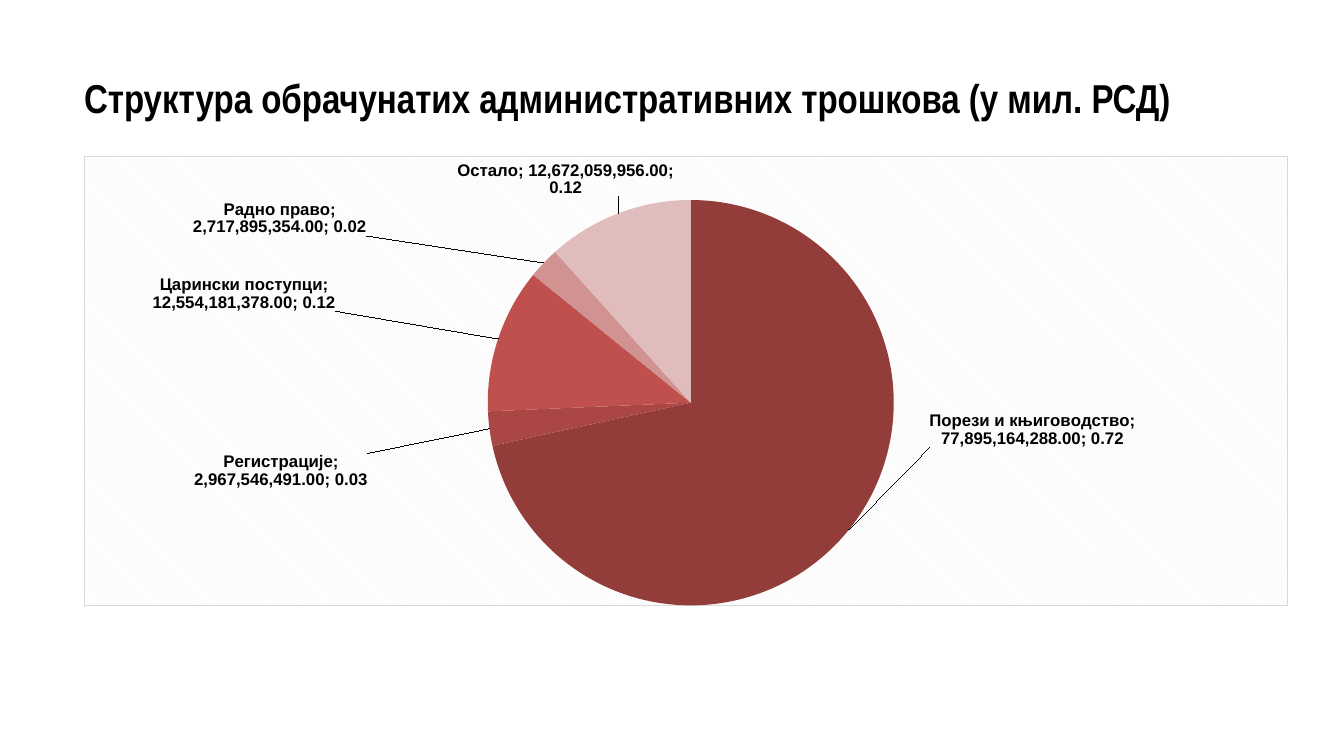
"""Build the slide on the structure of calculated administrative costs."""
from copy import deepcopy
from dataclasses import dataclass

from pptx import Presentation
from pptx.chart.chart import Chart
from pptx.chart.data import CategoryChartData
from pptx.dml.color import RGBColor
from pptx.enum.chart import XL_CHART_TYPE, XL_LABEL_POSITION
from pptx.enum.text import MSO_ANCHOR
from pptx.oxml import parse_xml
from pptx.oxml.ns import nsdecls, qn
from pptx.slide import Slide
from pptx.util import Emu, Pt

EMU_PER_PX = 914400 / 100.8
COLORS = {
    "text": "000000",
    "hatch": "F2F2F2",
    "ground": "FFFFFF",
    "border": "D9D9D9",
    "taxes": "923D3A",
    "registration": "AA4744",
    "customs": "C0504D",
    "labour": "D19392",
    "other": "E0BCBC",
}
CHART_BOX = (84, 156, 1204, 450)
TITLE_BOX = (84, 73, 1204, 94)


@dataclass(frozen=True)
class Cost:
    name: str
    amount: int
    color: str
    label_dx: int
    label_dy: int


COSTS = [
    Cost("Порези и књиговодство", 77895164288, "taxes", 76, -122),
    Cost("Регистрације", 2967546491, "registration", -116, 24),
    Cost("Царински поступци", 12554181378, "customs", -157, -26),
    Cost("Радно право", 2717895354, "labour", -173, -23),
    Cost("Остало", 12672059956, "other", 58, -11),
]


def px(length: int) -> Emu:
    return Emu(round(length * EMU_PER_PX))


def rgb(name: str) -> RGBColor:
    return RGBColor.from_string(COLORS[name])


def add_title(slide: Slide, text: str) -> None:
    frame = slide.shapes.add_textbox(*map(px, TITLE_BOX)).text_frame
    frame.word_wrap = True
    frame.vertical_anchor = MSO_ANCHOR.TOP
    frame.margin_left = frame.margin_right = 0
    frame.margin_top = frame.margin_bottom = 0
    frame.text = text
    font = frame.paragraphs[0].runs[0].font
    font.name, font.size, font.bold = "Arial Narrow", Pt(28.8), True
    font.color.rgb = rgb("text")


def style_background(chart: Chart) -> None:
    background = parse_xml(
        f'<c:spPr {nsdecls("c", "a")}><a:pattFill prst="dkDnDiag">'
        f'<a:fgClr><a:srgbClr val="{COLORS["hatch"]}"/></a:fgClr>'
        f'<a:bgClr><a:srgbClr val="{COLORS["ground"]}"/></a:bgClr></a:pattFill>'
        f'<a:ln w="9525"><a:solidFill><a:srgbClr val="{COLORS["border"]}"/>'
        "</a:solidFill></a:ln></c:spPr>"
    )
    chart.element.find(qn("c:chart")).addnext(background)


def place_plot(chart: Chart) -> None:
    plot_area = chart.element.find(".//" + qn("c:plotArea"))
    for layout in plot_area.findall(qn("c:layout")):
        plot_area.remove(layout)
    plot_area.insert(0, parse_xml(
        f'<c:layout {nsdecls("c")}><c:manualLayout><c:layoutTarget val="inner"/>'
        '<c:xMode val="edge"/><c:yMode val="edge"/><c:x val="0.335"/>'
        '<c:y val="0.097"/><c:w val="0.338"/><c:h val="0.903"/>'
        "</c:manualLayout></c:layout>"
    ))


def label_slices(chart: Chart) -> None:
    labels = chart.plots[0].series[0].data_labels
    labels.number_format = "#,##0.00"
    labels.number_format_is_linked = False
    labels.position = XL_LABEL_POSITION.OUTSIDE_END
    labels.show_value = labels.show_percentage = labels.show_category_name = True
    labels.font.name, labels.font.size, labels.font.bold = "Arial", Pt(12), True
    labels.font.color.rgb = rgb("text")

    group = chart.element.find(".//" + qn("c:ser")).find(qn("c:dLbls"))
    separator = parse_xml(f'<c:separator {nsdecls("c")}>; </c:separator>')
    group.find(qn("c:showPercent")).addnext(separator)
    bubble = group.find(qn("c:showBubbleSize"))
    if bubble is not None:
        bubble.addnext(separator)
    shared = [part for part in group if part.tag != qn("c:showLeaderLines")]
    _, _, width, height = CHART_BOX
    for index, cost in enumerate(COSTS):
        label = parse_xml(
            f'<c:dLbl {nsdecls("c")}><c:idx val="{index}"/><c:layout><c:manualLayout>'
            f'<c:x val="{cost.label_dx / width:.4f}"/>'
            f'<c:y val="{cost.label_dy / height:.4f}"/>'
            "</c:manualLayout></c:layout></c:dLbl>"
        )
        label.extend(deepcopy(part) for part in shared)
        group.insert(index, label)


def add_cost_chart(slide: Slide) -> None:
    data = CategoryChartData(number_format="#,##0.00")
    data.categories = [cost.name for cost in COSTS]
    data.add_series("Series 1", [cost.amount for cost in COSTS])
    chart = slide.shapes.add_chart(XL_CHART_TYPE.PIE, *map(px, CHART_BOX), data).chart
    chart.has_title = chart.has_legend = False
    chart.font.name, chart.font.size = "Arial", Pt(10)
    chart.font.color.rgb = rgb("text")
    chart.plots[0].vary_by_categories = True
    for index, cost in enumerate(COSTS):
        fill = chart.plots[0].series[0].points[index].format.fill
        fill.solid()
        fill.fore_color.rgb = rgb(cost.color)
    style_background(chart)
    place_plot(chart)
    label_slices(chart)


def main() -> None:
    presentation = Presentation()
    presentation.slide_width, presentation.slide_height = px(1344), px(756)
    slide = presentation.slides.add_slide(presentation.slide_layouts[6])
    add_cost_chart(slide)
    add_title(slide, "Структура обрачунатих административних трошкова (у мил. РСД)")
    presentation.save("out.pptx")


if __name__ == "__main__":
    main()
